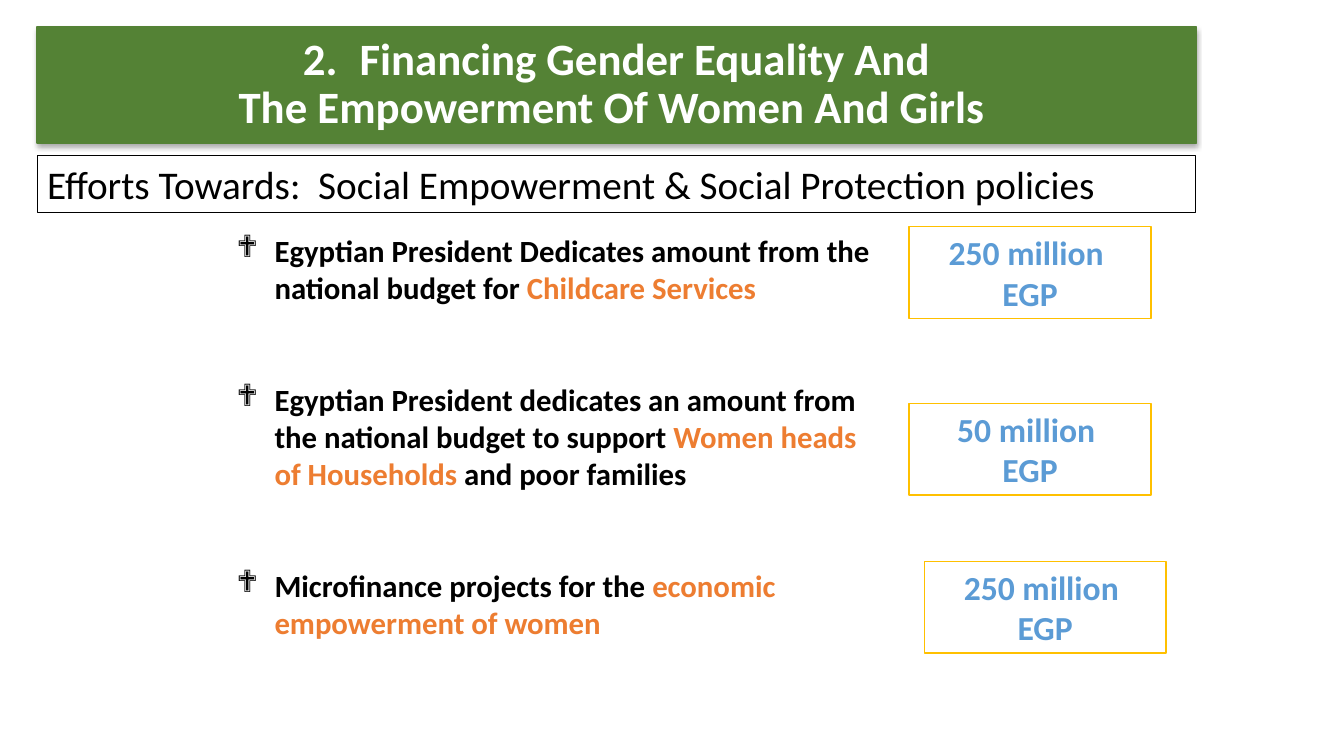
from lxml.etree import SubElement
from pptx import Presentation
from pptx.dml.color import RGBColor
from pptx.enum.shapes import MSO_SHAPE
from pptx.enum.text import MSO_ANCHOR, PP_ALIGN
from pptx.oxml.ns import qn
from pptx.util import Pt

GREEN = RGBColor(0x54, 0x82, 0x35)
WHITE = RGBColor(0xFF, 0xFF, 0xFF)
BLACK = RGBColor(0, 0, 0)
GOLD = RGBColor(0xFF, 0xC0, 0)
BLUE = RGBColor(0x5B, 0x9B, 0xD5)
ORANGE = RGBColor(0xED, 0x7D, 0x31)

POINTS = [
    [("Egyptian President Dedicates amount from the national budget for ", BLACK),
     ("Childcare Services", ORANGE)],
    [("Egyptian President dedicates an amount from the national budget to support ", BLACK),
     ("Women heads of Households", ORANGE),
     (" and poor families", BLACK)],
    [("Microfinance projects for the ", BLACK),
     ("economic empowerment of women", ORANGE)],
]
AMOUNTS = [
    ("250 million ", 649.4, 162),
    ("50 million ", 649.4, 288),
    ("250 million ", 660.2, 401),
]


def add_run(para, text, size, color, bold=True):
    """Add one formatted run to a paragraph."""
    run = para.add_run()
    run.text = text
    font = run.font
    font.name = "Calibri"
    font.size = Pt(size)
    font.bold = bold
    font.color.rgb = color


def add_mark(para, indent, tag, **attrs):
    """Give a paragraph a hanging bullet or number."""
    props = para._p.get_or_add_pPr()
    props.set("marL", str(Pt(indent)))
    props.set("indent", str(-Pt(indent)))
    SubElement(props, qn(tag), **attrs)


def add_box(slide, left, top, width, height, fill, line):
    """Draw a filled, outlined rectangle and return it."""
    box = slide.shapes.add_shape(
        MSO_SHAPE.RECTANGLE, Pt(left), Pt(top), Pt(width), Pt(height))
    box.shadow.inherit = False
    box.fill.solid()
    box.fill.fore_color.rgb = fill
    box.line.color.rgb = line
    box.line.width = Pt(1)
    box.text_frame.word_wrap = True
    return box


def add_lines(box, lines, size, color, align=PP_ALIGN.CENTER, bold=True):
    """Write one paragraph per line and return the paragraphs."""
    frame = box.text_frame
    for index, text in enumerate(lines):
        para = frame.add_paragraph() if index else frame.paragraphs[0]
        para.alignment = align
        add_run(para, text, size, color, bold)
    return frame.paragraphs


def add_shade(box):
    """Cast a soft shadow below a box."""
    effects = box._element.spPr.find(qn("a:effectLst"))
    shade = SubElement(effects, qn("a:outerShdw"), blurRad=str(Pt(3.5)),
                       dist=str(Pt(2.2)), dir="5400000", rotWithShape="0")
    color = SubElement(shade, qn("a:srgbClr"), val=str(BLACK))
    SubElement(color, qn("a:alpha"), val="32000")


def add_title(slide):
    """Draw the numbered title banner."""
    box = add_box(slide, 26.6, 19.4, 828, 82.8, GREEN, GREEN)
    add_shade(box)
    box.text_frame.vertical_anchor = MSO_ANCHOR.MIDDLE
    paras = add_lines(box, ["Financing Gender Equality And",
                            "The Empowerment Of Women And Girls "], 32, WHITE)
    for para in paras:
        para.line_spacing = 0.9
    add_mark(paras[0], 40.5, "a:buFont", typeface="+mj-lt")
    add_mark(paras[0], 40.5, "a:buAutoNum", type="arabicPeriod", startAt="2")


def add_points(slide):
    """Write the bulleted list of measures."""
    box = slide.shapes.add_textbox(Pt(162), Pt(162), Pt(473.8), Pt(322.6))
    frame = box.text_frame
    frame.word_wrap = True
    for index, runs in enumerate(POINTS):
        para = frame.add_paragraph() if index else frame.paragraphs[0]
        if index:
            para.space_before = Pt(53.7)
        add_mark(para, 27, "a:buFont", typeface="Wingdings")
        add_mark(para, 27, "a:buChar", char="❖")
        for text, color in runs:
            add_run(para, text, 22, color)


def main():
    """Build and save the slide."""
    deck = Presentation()
    deck.slide_width, deck.slide_height = Pt(960), Pt(540)
    slide = deck.slides.add_slide(deck.slide_layouts[6])
    add_title(slide)
    add_points(slide)
    theme = add_box(slide, 26.6, 110.9, 827.3, 41, WHITE, BLACK)
    add_lines(theme, ["Efforts Towards:  Social Empowerment & Social Protection policies"],
              28, BLACK, PP_ALIGN.LEFT, False)
    for amount, left, top in AMOUNTS:
        box = add_box(slide, left, top, 172.8, 65.5, WHITE, GOLD)
        add_lines(box, [amount, "EGP"], 24, BLUE)
    deck.save("out.pptx")


if __name__ == "__main__":
    main()
